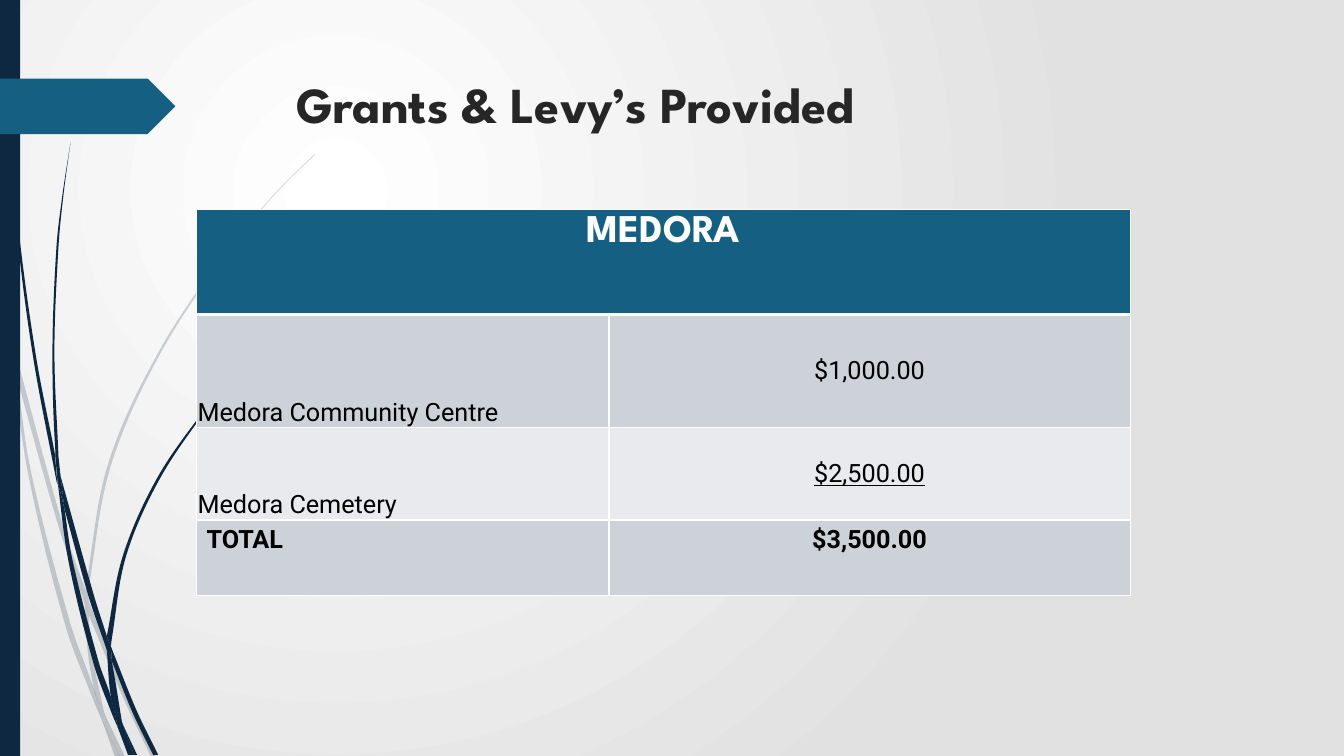
"""Build the slide of grants and levies provided to Medora."""
from math import dist, hypot

from lxml.etree import SubElement
from pptx import Presentation
from pptx.dml.color import RGBColor
from pptx.enum.shapes import MSO_SHAPE as Preset
from pptx.enum.text import MSO_ANCHOR as Anchor, PP_ALIGN as Align
from pptx.oxml import parse_xml
from pptx.oxml.ns import nsdecls, qn
from pptx.util import Pt

EMU_PER_PX = 9144
SLIDE_SIZE = (1333, 750)
COLORS = {"navy": "0E2841", "teal": "156082", "title": "262626", "text": "000000",
          "white": "FFFFFF", "edge": "E1E1E1", "band": "CCD2D8", "pale": "E8EAED"}
HEADING, BODY = "League Spartan", "Roboto"
TITLE = "Grants & Levy’s Provided"
TITLE_BOX = (284, 68, 975, 140)
TABLE_AT = (195, 208)
COLUMNS = (409, 517)
ROWS = (
    (104, "teal", ("MEDORA", "")),
    (112, "band", ("Medora Community Centre", "$1,000.00")),
    (92, "pale", ("Medora Cemetery", "$2,500.00")),
    (75, "band", ("TOTAL", "$3,500.00")),
)
HEADER_ROW, UNDERLINED_ROW, TOTAL_ROW = 0, 2, 3
THIN, THICK = 1, 3
SHAPES = (
    (Preset.RECTANGLE, (0, 0, 20, 750), "navy"),
    (Preset.PENTAGON, (0, 78, 174, 55), "teal"),
)
PALE_BLADES = (
    (((11, 350), (9, 322), (0, 282)), ((0, 299), (10, 344))),
    (((17, 376), (58, 522), (84, 599)), ((85, 586), (62, 520), (14, 345))),
    (((88, 610), (123, 694), (150, 751)), ((155, 751), (127, 692), (92, 607), (88, 596))),
    (((105, 711), (119, 751)), ((124, 751),)),
    (((11, 350), (28, 470), (65, 621), (92, 693), (101, 714)),
     ((99, 707), (93, 683), (70, 619), (31, 469), (17, 376))),
    (((84, 599), (87, 646), (93, 683), (96, 692), (105, 711)),
     ((103, 706), (91, 646), (88, 610), (88, 608))),
    (((312, 153), (289, 175), (268, 197), (228, 244), (158, 348), (107, 461), (85, 584), (85, 586)),
     ((88, 596), (88, 584), (110, 462), (160, 349), (229, 245), (268, 198), (290, 175), (312, 154))),
    (((101, 714), (114, 751)), ((119, 751),)),
    (((85, 586), (84, 599)), ((88, 608), (88, 610)), ((88, 596),)),
    (((93, 683), (99, 707), (101, 714), (119, 751)), ((105, 711), (96, 692))),
)
DARK_BLADES = (
    (((3, 0), (4, 48), (7, 110), (17, 233), (33, 355), (56, 477), (57, 481)),
     ((55, 457), (55, 453), (36, 355), (19, 232), (8, 109), (5, 48), (4, 0))),
    (((64, 505), (88, 592), (106, 645)), ((106, 631), (93, 590), (60, 472))),
    (((111, 656), (132, 708), (152, 749)), ((157, 749), (136, 706), (113, 649), (110, 641))),
    (((57, 477), (68, 557), (93, 659), (111, 708), (117, 722)),
     ((116, 717), (110, 691), (98, 657), (72, 556), (64, 505))),
    (((70, 141), (62, 193), (56, 245), (52, 349), (55, 449), (60, 472)),
     ((58, 453), (54, 349), (58, 245), (63, 193), (70, 141))),
    (((122, 719), (133, 749)), ((136, 749),)),
    (((55, 449), (55, 453), (57, 477)), ((64, 505), (60, 472))),
    (((260, 344), (245, 358), (231, 373), (204, 405), (156, 474), (122, 551), (106, 631)),
     ((110, 641), (111, 633), (125, 552), (158, 476), (205, 406), (231, 374), (245, 359), (261, 344))),
    (((117, 722), (127, 749)), ((131, 749),)),
    (((106, 645), (110, 691), (116, 706), (122, 719)), ((121, 716), (111, 656), (109, 651))),
    (((106, 631), (106, 645)), ((109, 651), (111, 656)), ((110, 641),)),
    (((110, 691), (116, 717), (117, 722), (130, 749)), ((133, 749), (122, 719), (116, 706))),
)


def emu(*lengths):
    return [round(length * EMU_PER_PX) for length in lengths]


def rgb(name):
    return RGBColor.from_string(COLORS[name])


def apply(target, **values):
    for name, value in values.items():
        setattr(target, name, value)


def write(frame, text, font, size, color, align=Align.LEFT, bold=False, underline=False):
    frame.word_wrap = True
    paragraph = frame.paragraphs[0]
    paragraph.alignment = align
    run = paragraph.add_run()
    run.text = text
    apply(run.font, name=font, size=Pt(size), bold=bold, underline=underline)
    run.font.color.rgb = rgb(color)


def paint(shape, color, opacity=100):
    shape.shadow.inherit = False
    shape.fill.solid()
    shape.fill.fore_color.rgb = rgb(color)
    shape.line.fill.background()
    if opacity < 100:
        fill_color = shape._element.spPr.find(qn("a:solidFill"))[0]
        SubElement(fill_color, qn("a:alpha"), val=str(opacity * 1000))


def shifted(point, before, after, distance):
    dx, dy = after[0] - before[0], after[1] - before[1]
    scale = distance / (hypot(dx, dy) or 1)
    return point[0] + dx * scale, point[1] + dy * scale


def edge_curves(edge):
    padded = (edge[0], *edge, edge[-1])
    for before, start, end, after in zip(padded, padded[1:], padded[2:], padded[3:]):
        reach = dist(start, end) / 3
        yield from (shifted(start, before, end, reach), shifted(end, start, after, -reach), end)


def add_blade(shapes, edges, opacity):
    points = list(edge_curves(edges[0]))
    for previous, edge in zip(edges, edges[1:]):
        points += [previous[-1], edge[0], edge[0], *edge_curves(edge)]
    builder = shapes.build_freeform(*emu(*edges[0][0]))
    builder.add_line_segments([emu(*point) for point in points], close=True)
    blade = builder.convert_to_shape()
    outline = blade._element.spPr.find(".//" + qn("a:path"))
    lines = outline.findall(qn("a:lnTo"))
    for triple in zip(lines[::3], lines[1::3], lines[2::3]):
        curve = SubElement(outline, qn("a:cubicBezTo"))
        outline.replace(triple[0], curve)
        for line in triple:
            curve.append(line[0])
        for line in triple[1:]:
            outline.remove(line)
    paint(blade, "navy", opacity)


def set_background(slide):
    fill = slide.background.fill
    fill.gradient()
    for stop, color in zip(fill.gradient_stops, ("white", "edge")):
        stop.color.rgb = rgb(color)
    gradient = slide.background._cSld.find(".//" + qn("a:gradFill"))
    gradient.replace(gradient.find(qn("a:lin")), parse_xml(
        f'<a:path {nsdecls("a")} path="circle">'
        '<a:fillToRect l="50000" t="50000" r="100000" b="100000"/></a:path>'))


def set_borders(cell, top, bottom):
    properties = cell._tc.get_or_add_tcPr()
    widths = {"lnL": THIN, "lnR": THIN, "lnT": top, "lnB": bottom}
    for position, (side, width) in enumerate(widths.items()):
        properties.insert(position, parse_xml(
            f'<a:{side} {nsdecls("a")} w="{Pt(width)}"><a:solidFill>'
            f'<a:srgbClr val="{COLORS["white"]}"/></a:solidFill></a:{side}>'))


def add_grants_table(shapes):
    size = (sum(COLUMNS), sum(row[0] for row in ROWS))
    table = shapes.add_table(len(ROWS), len(COLUMNS), *emu(*TABLE_AT, *size)).table
    apply(table, first_row=False, horz_banding=False)
    for column, width in zip(table.columns, COLUMNS):
        column.width = emu(width)[0]
    for row_index, (height, fill, texts) in enumerate(ROWS):
        table.rows[row_index].height = emu(height)[0]
        header, total = row_index == HEADER_ROW, row_index == TOTAL_ROW
        for column_index, text in enumerate(texts):
            cell = table.cell(row_index, column_index)
            cell.fill.solid()
            cell.fill.fore_color.rgb = rgb(fill)
            set_borders(cell, THICK if row_index == HEADER_ROW + 1 else THIN, THICK if header else THIN)
            if not header and not total:
                inset = emu(1)[0]
                apply(cell, margin_left=inset, margin_right=inset, margin_top=inset, margin_bottom=0,
                      vertical_anchor=Anchor.MIDDLE if column_index else Anchor.BOTTOM)
            if text:
                write(cell.text_frame, text, *((HEADING, 28, "white") if header else (BODY, 18, "text")),
                      align=Align.CENTER if header or column_index else Align.LEFT, bold=header or total,
                      underline=row_index == UNDERLINED_ROW and column_index == 1)
    table.cell(HEADER_ROW, 0).merge(table.cell(HEADER_ROW, len(COLUMNS) - 1))


def main():
    presentation = Presentation()
    width, height = emu(*SLIDE_SIZE)
    apply(presentation, slide_width=width, slide_height=height)
    slide = presentation.slides.add_slide(presentation.slide_layouts[5])
    set_background(slide)
    for blades, opacity in ((PALE_BLADES, 20), (DARK_BLADES, 100)):
        for edges in blades:
            add_blade(slide.shapes, edges, opacity)
    for preset, box, color in SHAPES:
        paint(slide.shapes.add_shape(preset, *emu(*box)), color)
    title = slide.shapes.title
    apply(title, **dict(zip(("left", "top", "width", "height"), emu(*TITLE_BOX))))
    title.text_frame.vertical_anchor = Anchor.TOP
    write(title.text_frame, TITLE, HEADING, 36, "title", bold=True)
    add_grants_table(slide.shapes)
    presentation.save("out.pptx")


if __name__ == "__main__":
    main()
